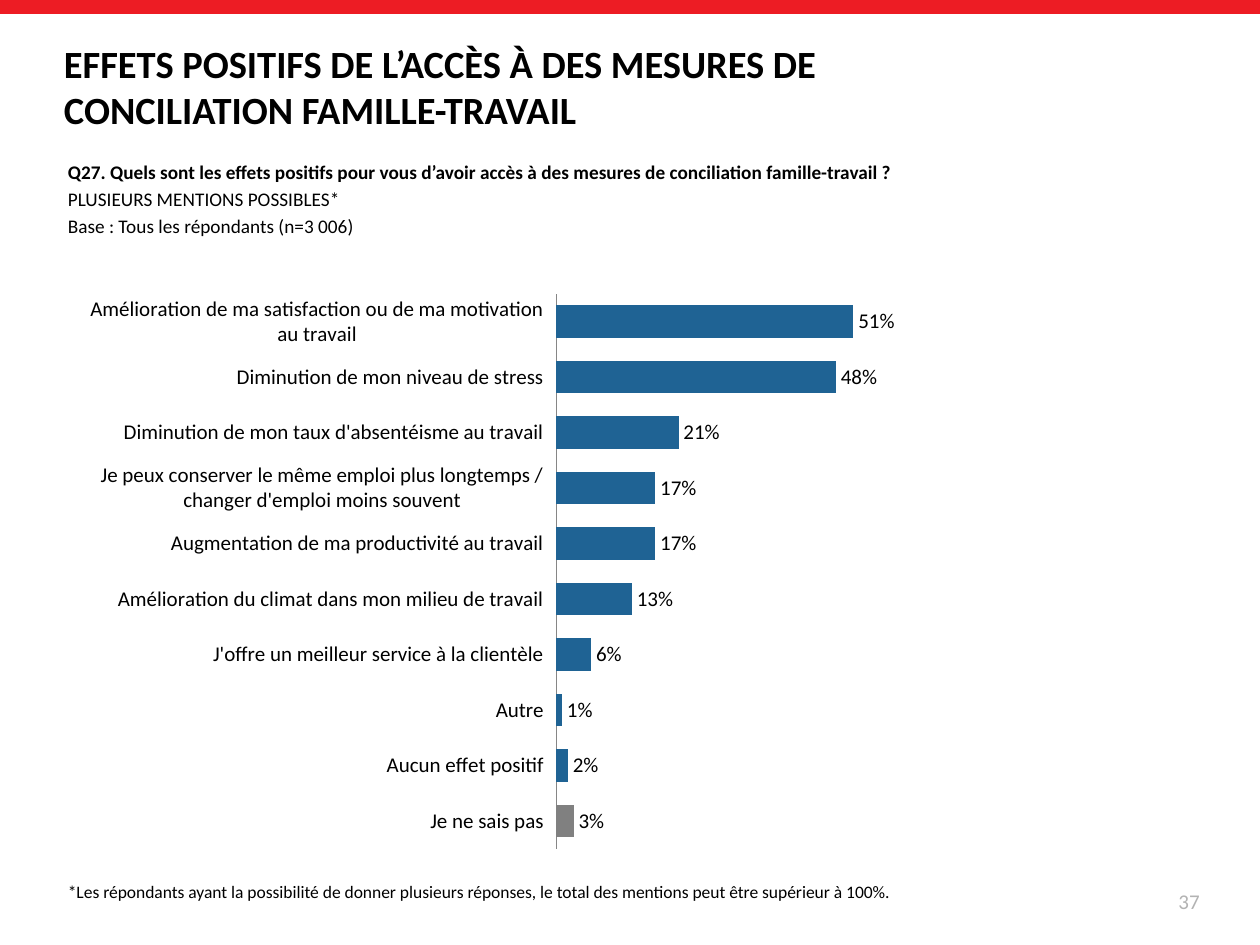
from dataclasses import dataclass

from lxml.etree import SubElement
from pptx import Presentation
from pptx.chart.data import CategoryChartData
from pptx.dml.color import RGBColor
from pptx.enum.chart import XL_CHART_TYPE as ChartType
from pptx.enum.chart import XL_LABEL_POSITION as LabelPosition
from pptx.enum.chart import XL_TICK_LABEL_POSITION as TickLabelPosition
from pptx.enum.chart import XL_TICK_MARK as TickMark
from pptx.enum.shapes import MSO_SHAPE as ShapeType
from pptx.enum.text import MSO_ANCHOR as Anchor
from pptx.enum.text import PP_ALIGN as Align
from pptx.oxml.ns import qn
from pptx.util import Inches, Pt


@dataclass(frozen=True)
class Theme:
    font: str = "Calibri"
    text: str = "000000"
    muted: str = "B3B3B3"
    banner: str = "ED1C24"
    bar: str = "1F6394"
    unsure_bar: str = "808080"
    axis: str = "868686"
    title_size: int = 22
    question_size: int = 11
    note_size: int = 10
    label_size: int = 12


THEME = Theme()


@dataclass(frozen=True)
class Line:
    text: str
    bold: bool = False


@dataclass(frozen=True)
class TextBlock:
    box: tuple[float, float, float, float]
    lines: tuple[Line, ...]
    size: int
    color: str = THEME.text
    align: Align = Align.LEFT
    anchor: Anchor = Anchor.TOP
    space_before: float = 0


@dataclass(frozen=True)
class Answer:
    label: str
    share: float
    color: str = THEME.bar


TEXT_BLOCKS = (
    TextBlock(
        (0.41, 0.42, 7.66, 0.52),
        (Line("EFFETS POSITIFS DE L’ACCÈS À DES MESURES DE CONCILIATION FAMILLE-TRAVAIL", True),),
        THEME.title_size,
        anchor=Anchor.MIDDLE,
    ),
    TextBlock(
        (0.44, 1.22, 8.04, 1.18),
        (
            Line("Q27. Quels sont les effets positifs pour vous d’avoir accès à des mesures "
                 "de conciliation famille-travail ?", True),
            Line("PLUSIEURS MENTIONS POSSIBLES*"),
            Line("Base : Tous les répondants (n=3 006)"),
        ),
        THEME.question_size,
        align=Align.JUSTIFY,
        space_before=2.2,
    ),
    TextBlock(
        (0.44, 6.94, 7.79, 0.27),
        (Line("*Les répondants ayant la possibilité de donner plusieurs réponses, "
              "le total des mentions peut être supérieur à 100%."),),
        THEME.note_size,
    ),
    TextBlock(
        (7.29, 6.95, 2.33, 0.4),
        (Line("37"),),
        THEME.label_size,
        color=THEME.muted,
        align=Align.RIGHT,
        anchor=Anchor.MIDDLE,
    ),
)

ANSWERS = (
    Answer("Amélioration de ma satisfaction ou de ma motivation au travail", 0.51),
    Answer("Diminution de mon niveau de stress", 0.48),
    Answer("Diminution de mon taux d'absentéisme au travail", 0.21),
    Answer("Je peux conserver le même emploi plus longtemps / changer d'emploi moins souvent", 0.17),
    Answer("Augmentation de ma productivité au travail", 0.17),
    Answer("Amélioration du climat dans mon milieu de travail", 0.13),
    Answer("J'offre un meilleur service à la clientèle", 0.06),
    Answer("Autre", 0.01),
    Answer("Aucun effet positif", 0.02),
    Answer("Je ne sais pas", 0.03, THEME.unsure_bar),
)

CHART_BOX = (0.63, 2.05, 8.41, 4.69)
PLOT_LAYOUT = {"x": 0.45, "y": 0.06, "w": 0.55, "h": 0.94}


def apply(target, formats: dict) -> None:
    for name, value in formats.items():
        setattr(target, name, value)


def style_font(font, size: int, color: str = THEME.text, bold: bool = False) -> None:
    apply(font, {"name": THEME.font, "size": Pt(size), "bold": bold})
    font.color.rgb = RGBColor.from_string(color)


def fill_solid(fill, color: str) -> None:
    fill.solid()
    fill.fore_color.rgb = RGBColor.from_string(color)


def add_banner(slide, width: int) -> None:
    banner = slide.shapes.add_shape(ShapeType.RECTANGLE, 0, 0, width, Inches(0.11))
    banner.shadow.inherit = False
    fill_solid(banner.fill, THEME.banner)
    banner.line.fill.background()


def add_text(slide, block: TextBlock) -> None:
    frame = slide.shapes.add_textbox(*map(Inches, block.box)).text_frame
    apply(frame, {"word_wrap": True, "vertical_anchor": block.anchor})
    for index, line in enumerate(block.lines):
        paragraph = frame.add_paragraph() if index else frame.paragraphs[0]
        paragraph.alignment = block.align
        if index and block.space_before:
            paragraph.space_before = Pt(block.space_before)
        run = paragraph.add_run()
        run.text = line.text
        style_font(run.font, block.size, block.color, line.bold)


def set_plot_layout(chart) -> None:
    plot_area = chart.plots[0]._element.getparent()
    for old_layout in plot_area.findall(qn("c:layout")):
        plot_area.remove(old_layout)
    layout = SubElement(plot_area, qn("c:layout"))
    plot_area.insert(0, layout)
    manual = SubElement(layout, qn("c:manualLayout"))
    settings = {"layoutTarget": "inner", "xMode": "edge", "yMode": "edge", **PLOT_LAYOUT}
    for name, value in settings.items():
        SubElement(manual, qn(f"c:{name}")).set("val", str(value))


def add_answer_chart(slide) -> None:
    data = CategoryChartData(number_format="0%")
    data.categories = [answer.label for answer in ANSWERS]
    data.add_series("Series 1", [answer.share for answer in ANSWERS])
    chart = slide.shapes.add_chart(
        ChartType.BAR_CLUSTERED, *map(Inches, CHART_BOX), data
    ).chart
    apply(chart, {"has_legend": False, "has_title": False})
    style_font(chart.font, THEME.label_size)
    set_plot_layout(chart)

    # Axes
    apply(chart.category_axis, {
        "reverse_order": True,
        "major_tick_mark": TickMark.NONE,
        "minor_tick_mark": TickMark.NONE,
        "tick_label_position": TickLabelPosition.LOW,
        "has_major_gridlines": False,
    })
    axis_line = chart.category_axis.format.line
    axis_line.width = Pt(0.75)
    axis_line.color.rgb = RGBColor.from_string(THEME.axis)
    apply(chart.value_axis, {
        "minimum_scale": 0,
        "maximum_scale": 1,
        "has_major_gridlines": False,
        "visible": False,
    })

    # Bars and their labels
    plot = chart.plots[0]
    apply(plot, {"gap_width": 70, "vary_by_categories": False, "has_data_labels": True})
    apply(plot.data_labels, {
        "show_value": True,
        "position": LabelPosition.OUTSIDE_END,
        "number_format": "0%",
        "number_format_is_linked": False,
    })
    series = plot.series[0]
    series.invert_if_negative = False
    fill_solid(series.format.fill, THEME.bar)
    for index, answer in enumerate(ANSWERS):
        if answer.color != THEME.bar:
            fill_solid(series.points[index].format.fill, answer.color)


def main() -> None:
    presentation = Presentation()
    apply(presentation, {"slide_width": Inches(10), "slide_height": Inches(7.5)})
    slide = presentation.slides.add_slide(presentation.slide_layouts[6])
    add_banner(slide, presentation.slide_width)
    for block in TEXT_BLOCKS:
        add_text(slide, block)
    add_answer_chart(slide)
    presentation.save("out.pptx")


if __name__ == "__main__":
    main()
